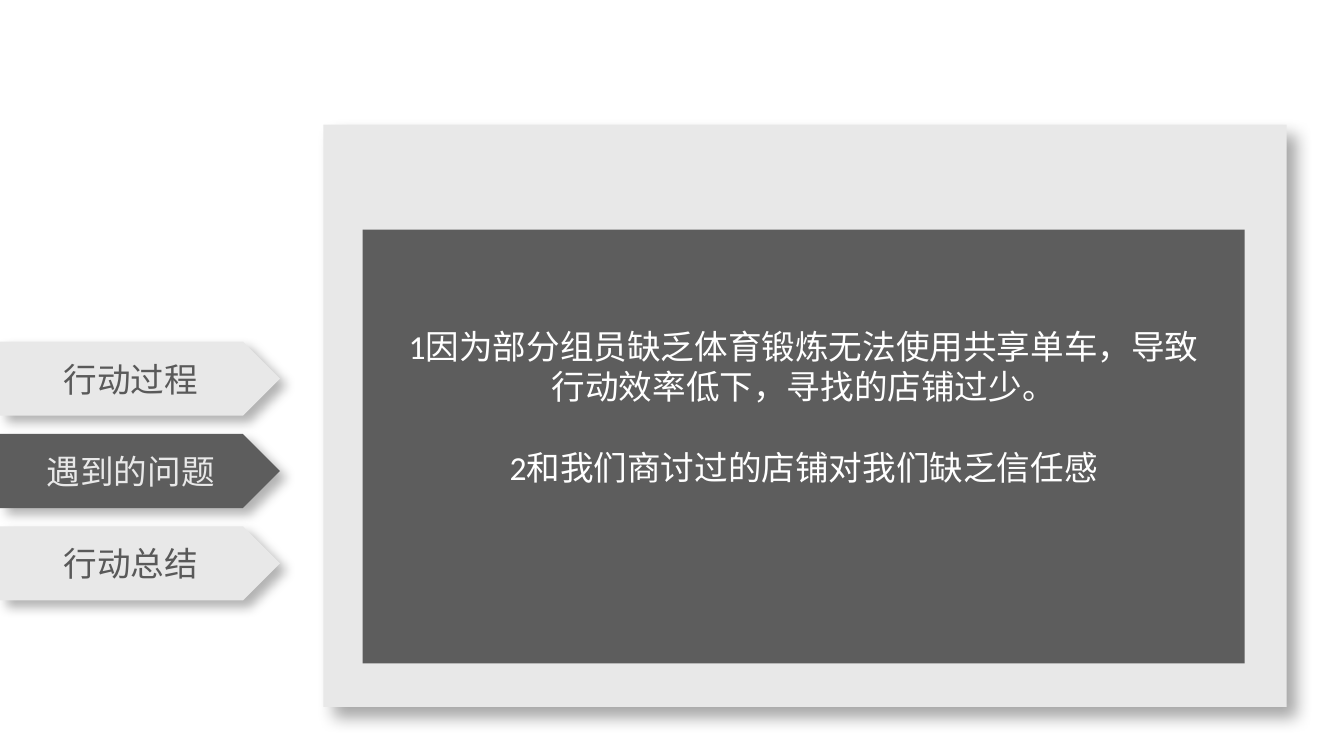
from lxml.etree import SubElement
from pptx import Presentation
from pptx.dml.color import RGBColor
from pptx.enum.shapes import MSO_SHAPE
from pptx.enum.text import MSO_ANCHOR, PP_ALIGN
from pptx.oxml.ns import qn
from pptx.util import Pt

PX = 9525  # EMU in one px, 96 px to the inch
COLOURS = {
    "light": "E8E8E8",
    "dark": "5D5D5D",
    "label": "595959",
    "white": "FFFFFF",
    "shadow": "000000",
}
PROBLEMS = [
    "1因为部分组员缺乏体育锻炼无法使用共享单车，导致",
    "行动效率低下，寻找的店铺过少。",
    "2和我们商讨过的店铺对我们缺乏信任感",
]
TABS = ["行动过程", "遇到的问题", "行动总结"]
ACTIVE_TAB = "遇到的问题"


def rgb(name):
    return RGBColor.from_string(COLOURS[name])


def add_block(page, kind, box, fill):
    """Add a borderless filled shape; box is left, top, width, height in px."""
    shape = page.shapes.add_shape(kind, *(length * PX for length in box))
    shape.shadow.inherit = False
    shape.fill.solid()
    shape.fill.fore_color.rgb = rgb(fill)
    shape.line.fill.background()
    return shape


def cast_shadow(shape, opacity, blur, distance):
    """Cast a shadow to the lower right; blur and distance are in points."""
    effects = shape._element.spPr.find(qn("a:effectLst"))
    shadow = SubElement(
        effects, qn("a:outerShdw"), blurRad=str(Pt(blur)), dist=str(Pt(distance)),
        dir=str(45 * 60000), algn="tl", rotWithShape="0")
    colour = SubElement(shadow, qn("a:srgbClr"), val=COLOURS["shadow"])
    SubElement(colour, qn("a:alpha"), val=str(opacity * 1000))


def write(shape, lines, font, colour):
    frame = shape.text_frame
    frame.word_wrap = True
    frame.vertical_anchor = MSO_ANCHOR.MIDDLE
    frame.text = "\n".join(lines)
    for para in frame.paragraphs:
        para.alignment = PP_ALIGN.CENTER
        for span in para.runs:
            span.font.name = font
            span.font.size = Pt(18)
            span.font.color.rgb = rgb(colour)
    return frame


def add_problem_panel(page, box):
    left, top, width, height = box
    panel = add_block(page, MSO_SHAPE.RECTANGLE, box, "light")
    cast_shadow(panel, 35, 9, 8)
    inner = (left + 28, top + 75, width - 58, height - 106)
    board = add_block(page, MSO_SHAPE.RECTANGLE, inner, "dark")
    frame = write(board, PROBLEMS, "Calibri", "white")
    frame.margin_bottom = 62 * PX  # lifts the centred text by one line
    frame.paragraphs[-1].space_before = Pt(21.5)


def add_tabs(page, box, gap):
    left, top, width, height = box
    tab_height = (height - gap * (len(TABS) - 1)) // len(TABS)
    for index, name in enumerate(TABS):
        fill, colour = ("dark", "light") if name == ACTIVE_TAB else ("light", "label")
        tab_top = top + index * (tab_height + gap)
        tab = add_block(page, MSO_SHAPE.PENTAGON,
                        (left, tab_top, width, tab_height), fill)
        cast_shadow(tab, 30, 6, 5)
        write(tab, [name], "DejaVu Sans", colour)


def main():
    deck = Presentation()
    deck.slide_width = 960 * PX
    deck.slide_height = 540 * PX
    page = deck.slides.add_slide(deck.slide_layouts[6])
    add_problem_panel(page, (231, 89, 688, 416))
    add_tabs(page, (0, 244, 200, 185), gap=13)
    deck.save("out.pptx")


if __name__ == "__main__":
    main()
